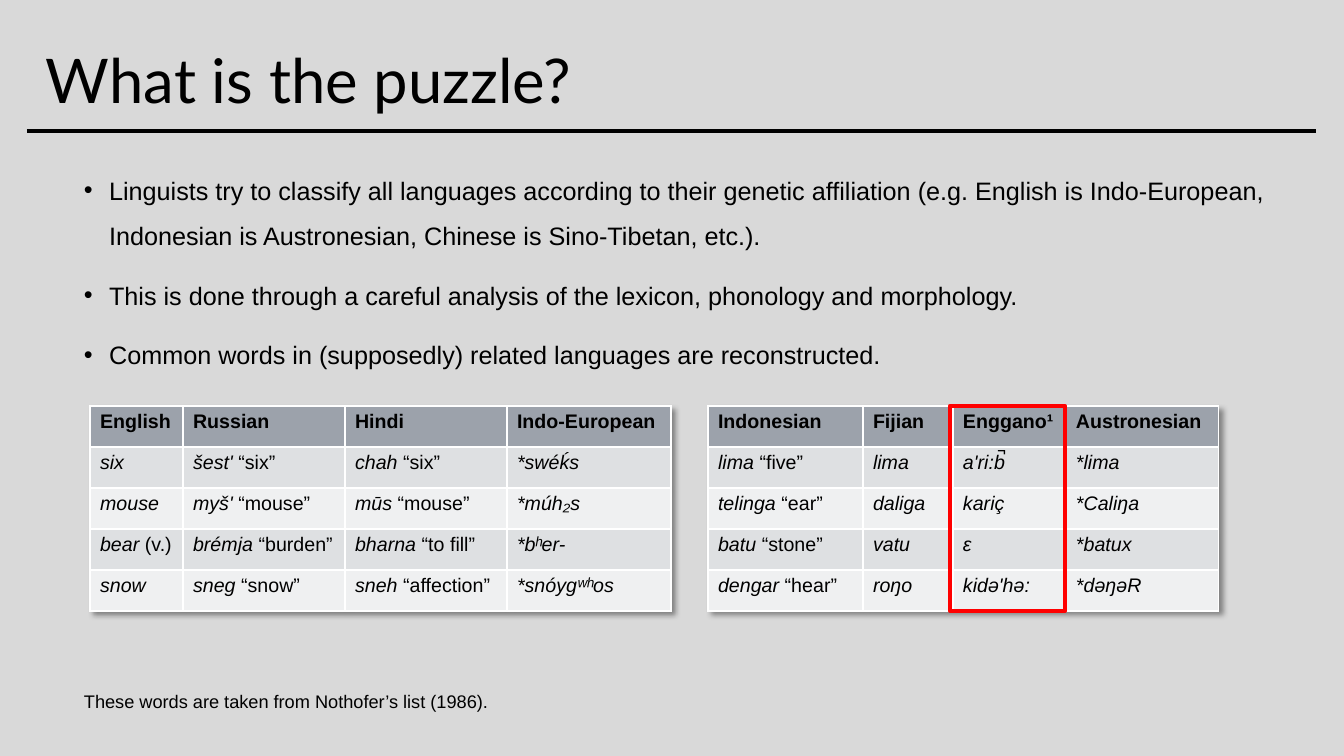
import pptx
import pptx.dml.color
import pptx.enum.shapes
import pptx.enum.text
import pptx.oxml
import pptx.oxml.ns
import pptx.util
from dataclasses import dataclass

NS = pptx.oxml.ns.nsdecls("a")
SHADOW = (
    f'<a:effectLst {NS}><a:outerShdw blurRad="50800" dist="38100" dir="2700000" '
    'algn="tl" rotWithShape="0"><a:srgbClr val="000000"><a:alpha val="40000"/>'
    "</a:srgbClr></a:outerShdw></a:effectLst>"
)


@dataclass(frozen=True)
class Theme:
    back: str = "D9D9D9"
    ink: str = "000000"
    mark: str = "FF0000"
    rule: str = "FFFFFF"
    head: str = "9CA2AB"
    bands: tuple = ("DEE0E2", "EFF0F1")
    title: int = 44
    body: int = 18
    cell: int = 14
    note: int = 13
    line: int = 3
    face: str = "Arial"
    display: str = "Lato"


def px(n):
    return pptx.util.Emu(round(n * 63500 / 7))


def rgb(code):
    return pptx.dml.color.RGBColor.from_string(code)


def add_xml(parent, text, at=None):
    node = pptx.oxml.parse_xml(text)
    parent.insert(len(parent) if at is None else at, node)


class Deck:
    def __init__(self, theme):
        self.theme = theme
        self.file = pptx.Presentation()
        self.file.slide_width, self.file.slide_height = px(1344), px(756)
        self.slide = self.file.slides.add_slide(self.file.slide_layouts[6])
        self.slide.background.fill.solid()
        self.slide.background.fill.fore_color.rgb = rgb(theme.back)
        self.shapes = self.slide.shapes

    def font(self, para, size, face=None, bold=False):
        font = para.font
        font.name, font.size = face or self.theme.face, pptx.util.Pt(size)
        font.bold, font.color.rgb = bold, rgb(self.theme.ink)

    def text(self, box, lines, size, face=None, space=1.5, bullet=False, middle=False):
        frame = self.shapes.add_textbox(*map(px, box)).text_frame
        frame.word_wrap = True
        if middle:
            frame.vertical_anchor = pptx.enum.text.MSO_ANCHOR.MIDDLE
        for i, line in enumerate(lines):
            para = frame.add_paragraph() if i else frame.paragraphs[0]
            para.text = line
            para.line_spacing = space
            if i:
                para.space_before = pptx.util.Pt(10)
            if bullet:
                props = para._p.get_or_add_pPr()
                props.set("marL", "228600")
                props.set("indent", "-228600")
                add_xml(props, f'<a:buFont {NS} typeface="Arial"/>')
                add_xml(props, f'<a:buChar {NS} char="•"/>')
            self.font(para, size, face)

    def line(self, start, end):
        link = self.shapes.add_connector(
            pptx.enum.shapes.MSO_CONNECTOR.STRAIGHT, *map(px, start + end))
        link.line.color.rgb = rgb(self.theme.ink)
        link.line.width = pptx.util.Pt(self.theme.line)
        add_xml(link._element.spPr, f"<a:effectLst {NS}/>")

    def frame(self, box):
        rect = self.shapes.add_shape(
            pptx.enum.shapes.MSO_SHAPE.RECTANGLE, *map(px, box))
        rect.shadow.inherit = False
        rect.fill.background()
        rect.line.color.rgb = rgb(self.theme.mark)
        rect.line.width = pptx.util.Pt(self.theme.line)

    def table(self, left, top, widths, high, rows):
        table = self.shapes.add_table(
            len(rows), len(widths), px(left), px(top),
            px(sum(widths)), px(high * len(rows))).table
        add_xml(table._tbl.tblPr, SHADOW, 0)
        for col, width in zip(table.columns, widths):
            col.width = px(width)
        for r, row in enumerate(rows):
            table.rows[r].height = px(high)
            for c, text in enumerate(row):
                self.cell(table.cell(r, c), text, r)

    def cell(self, cell, text, row):
        """Fill one cell; in body rows the part after "|" stands upright."""
        theme = self.theme
        para = cell.text_frame.paragraphs[0]
        self.font(para, theme.cell, bold=row == 0)
        for i, part in enumerate(text.split("|")):
            run = para.add_run()
            run.text = part
            run.font.italic = row > 0 and i == 0
        props = cell._tc.get_or_add_tcPr()
        for side in ("lnL", "lnR", "lnT", "lnB"):
            add_xml(props, f'<a:{side} {NS} w="12700"><a:solidFill>'
                           f'<a:srgbClr val="{theme.rule}"/></a:solidFill></a:{side}>')
        cell.fill.solid()
        cell.fill.fore_color.rgb = rgb(theme.bands[(row - 1) % 2] if row else theme.head)


POINTS = [
    "Linguists try to classify all languages according to their genetic affiliation "
    "(e.g. English is Indo-European, Indonesian is Austronesian, Chinese is "
    "Sino-Tibetan, etc.).",
    "This is done through a careful analysis of the lexicon, phonology and morphology.",
    "Common words in (supposedly) related languages are reconstructed.",
]
INDO = [
    ["English", "Russian", "Hindi", "Indo-European"],
    ["six", "šestʹ| “six”", "chah| “six”", "*swéḱs"],
    ["mouse", "myšʹ| “mouse”", "mūs| “mouse”", "*múh₂s"],
    ["bear |(v.)", "brémja| “burden”", "bharna |“to fill”", "*bʰer-"],
    ["snow", "sneg| “snow”", "sneh |“affection”", "*snóygʷʰos"],
]
AUSTRO = [
    ["Indonesian", "Fijian", "Enggano¹", "Austronesian"],
    ["lima |“five”", "lima", "aʹri:b̚", "*lima"],
    ["telinga |“ear”", "daliga", "kariç", "*Caliŋa"],
    ["batu |“stone”", "vatu", "ɛ", "*batux"],
    ["dengar |“hear”", "roŋo", "kidəʹhə:", "*dəŋəR"],
]


def main():
    theme = Theme()
    deck = Deck(theme)
    top, high = 406, 41

    # Title and rule
    deck.text((36, 45, 1200, 78), ["What is the puzzle?"], theme.title,
              theme.display, space=0.9, middle=True)
    deck.line((27, 131), (1316, 131))

    # Main points
    deck.text((74, 155, 1235, 251), POINTS, theme.body, bullet=True)

    # Word lists
    deck.table(90, top, [93, 162, 162, 164], high, INDO)
    deck.table(708, top, [155, 90, 113, 153], high, AUSTRO)

    # Source note and highlighted column
    deck.text((74, 674, 475, 50),
              ["These words are taken from Nothofer’s list (1986)."], theme.note)
    deck.frame((950, top, 115, high * len(AUSTRO)))

    deck.file.save("out.pptx")


if __name__ == "__main__":
    main()
